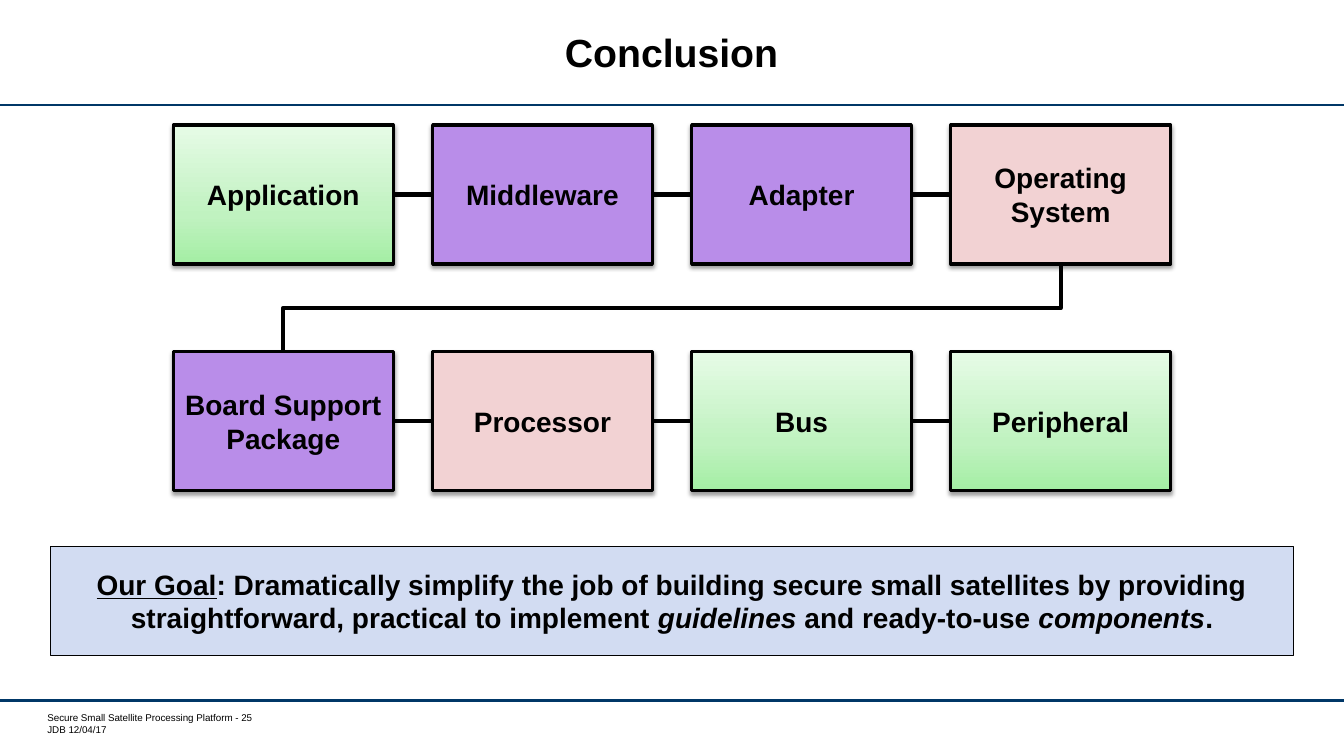
from lxml import etree
from copy import deepcopy
from pptx import Presentation
from pptx.dml.color import RGBColor
from pptx.enum.shapes import MSO_CONNECTOR as CONN, MSO_SHAPE as SHAPE
from pptx.enum.text import MSO_ANCHOR as ANCHOR, PP_ALIGN as ALIGN
from pptx.oxml.ns import qn
from pptx.util import Inches, Pt

BLACK, NAVY = "000000", "003767"
GREEN, PURPLE, PINK = ("A4EEA4", "C0F2C0", "E6FBE6"), "B98DE9", "F2D2D3"
ROWS = [
    [("Application", GREEN), ("Middleware", PURPLE), ("Adapter", PURPLE), ("Operating System", PINK)],
    [("Board Support Package", PURPLE), ("Processor", PINK), ("Bus", GREEN), ("Peripheral", GREEN)],
]
GOAL = [
    ("Our Goal", "u"),
    (": Dramatically simplify the job of building secure small satellites by providing "
     "straightforward, practical to implement ", ""),
    ("guidelines", "i"),
    (" and ready-to-use ", ""),
    ("components", "i"),
    (".", ""),
]
LEFT, TOP, BOX_W, BOX_H, STEP_X, STEP_Y = 1.72, 1.24, 2.18, 1.38, 2.57, 2.25


def rgb(color):
    """Turn a hex string into a colour."""
    return RGBColor.from_string(color)


def style_run(r, size, bold=True):
    """Give a run the slide's black Arial."""
    r.font.name, r.font.size, r.font.bold = "Arial", Pt(size), bold
    r.font.color.rgb = rgb(BLACK)


def add_text(slide, left, top, width, height, text, size, bold=False):
    """Add a wrapping text box and return its text frame."""
    tf = slide.shapes.add_textbox(Inches(left), Inches(top), Inches(width), Inches(height)).text_frame
    tf.word_wrap = True
    tf.text = text
    for p in tf.paragraphs:
        for r in p.runs:
            style_run(r, size, bold)
    return tf


def fill_gradient(s, colors):
    """Fill a shape with three colours rising from its bottom edge."""
    s.fill.gradient()
    s.fill.gradient_angle = 90
    first, last = s.fill.gradient_stops
    first.color.rgb, first.position = rgb(colors[0]), 0
    last.color.rgb, last.position = rgb(colors[1]), 0.35
    stops = s._element.spPr.find(".//" + qn("a:gsLst"))
    stops.append(deepcopy(stops[-1]))
    top = s.fill.gradient_stops[2]
    top.color.rgb, top.position = rgb(colors[2]), 1


def add_shadow(s):
    """Add a soft shadow just below a shape."""
    effects = s._element.spPr.find(qn("a:effectLst"))
    shadow = etree.SubElement(effects, qn("a:outerShdw"), blurRad="40000", dist="20000",
                              dir="5400000", rotWithShape="0")
    color = etree.SubElement(shadow, qn("a:srgbClr"), val=BLACK)
    etree.SubElement(color, qn("a:alpha"), val="38000")


def add_box(slide, left, top, width, height, fill, line, pieces):
    """Add an outlined rectangle with centred bold text."""
    s = slide.shapes.add_shape(SHAPE.RECTANGLE, Inches(left), Inches(top), Inches(width), Inches(height))
    s.shadow.inherit = False
    if isinstance(fill, tuple):
        fill_gradient(s, fill)
    else:
        s.fill.solid()
        s.fill.fore_color.rgb = rgb(fill)
    s.line.color.rgb, s.line.width = rgb(BLACK), Pt(line)
    tf = s.text_frame
    tf.word_wrap, tf.vertical_anchor = True, ANCHOR.MIDDLE
    p = tf.paragraphs[0]
    p.alignment = ALIGN.CENTER
    for text, mark in pieces:
        r = p.add_run()
        r.text = text
        style_run(r, 20)
        if mark == "u":
            r.font.underline = True
        elif mark == "i":
            r.font.italic = True
    return s


def add_line(slide, x1, y1, x2, y2, color=BLACK, width=3, kind=CONN.STRAIGHT):
    """Add a connector without a shadow."""
    c = slide.shapes.add_connector(kind, Inches(x1), Inches(y1), Inches(x2), Inches(y2))
    c.line.color.rgb, c.line.width = rgb(color), Pt(width)
    etree.SubElement(c._element.spPr, qn("a:effectLst"))
    return c


def add_row(slide, top, items):
    """Add a row of component boxes joined side to side."""
    boxes = []
    for i, (name, fill) in enumerate(items):
        s = add_box(slide, LEFT + i * STEP_X, top, BOX_W, BOX_H, fill, 2.25, [(name, "")])
        add_shadow(s)
        boxes.append(s)
    for i, (a, b) in enumerate(zip(boxes, boxes[1:])):
        x, y = LEFT + i * STEP_X + BOX_W, top + BOX_H / 2
        c = add_line(slide, x, y, LEFT + (i + 1) * STEP_X, y)
        c.begin_connect(a, 3)
        c.end_connect(b, 1)


def add_row_link(slide):
    """Link the last box of the first row to the first of the second."""
    run, drop = 3 * STEP_X, STEP_Y - BOX_H
    mid_x = LEFT + (run + BOX_W) / 2
    mid_y = TOP + BOX_H + drop / 2
    c = add_line(slide, mid_x - drop / 2, mid_y - run / 2, mid_x + drop / 2, mid_y + run / 2,
                 kind=CONN.ELBOW)
    c._element.spPr.find(qn("a:xfrm")).set("rot", "5400000")


def main():
    """Build the conclusion slide."""
    prs = Presentation()
    prs.slide_width, prs.slide_height = Inches(13.33), Inches(7.5)
    slide = prs.slides.add_slide(prs.slide_layouts[6])

    for y in (1.04, 6.95):
        add_line(slide, 0, y, 13.33, y, NAVY, 1.75)
    footer = add_text(slide, 0.47, 7.06, 2.12, 0.27,
                      "Secure Small Satellite Processing Platform - 25\nJDB 12/04/17", 7)
    footer.margin_left = footer.margin_right = footer.margin_top = footer.margin_bottom = 0
    title = add_text(slide, 1.37, 0.11, 10.58, 0.89, "Conclusion", 28, True)
    title.vertical_anchor = ANCHOR.MIDDLE
    title.paragraphs[0].alignment = ALIGN.CENTER
    title.paragraphs[0].line_spacing = Pt(28)

    add_box(slide, 0.5, 5.42, 12.33, 1.08, "D2DCF2", 0.75, GOAL)
    for i, items in enumerate(ROWS):
        add_row(slide, TOP + i * STEP_Y, items)
    add_row_link(slide)
    prs.save("out.pptx")


if __name__ == "__main__":
    main()
